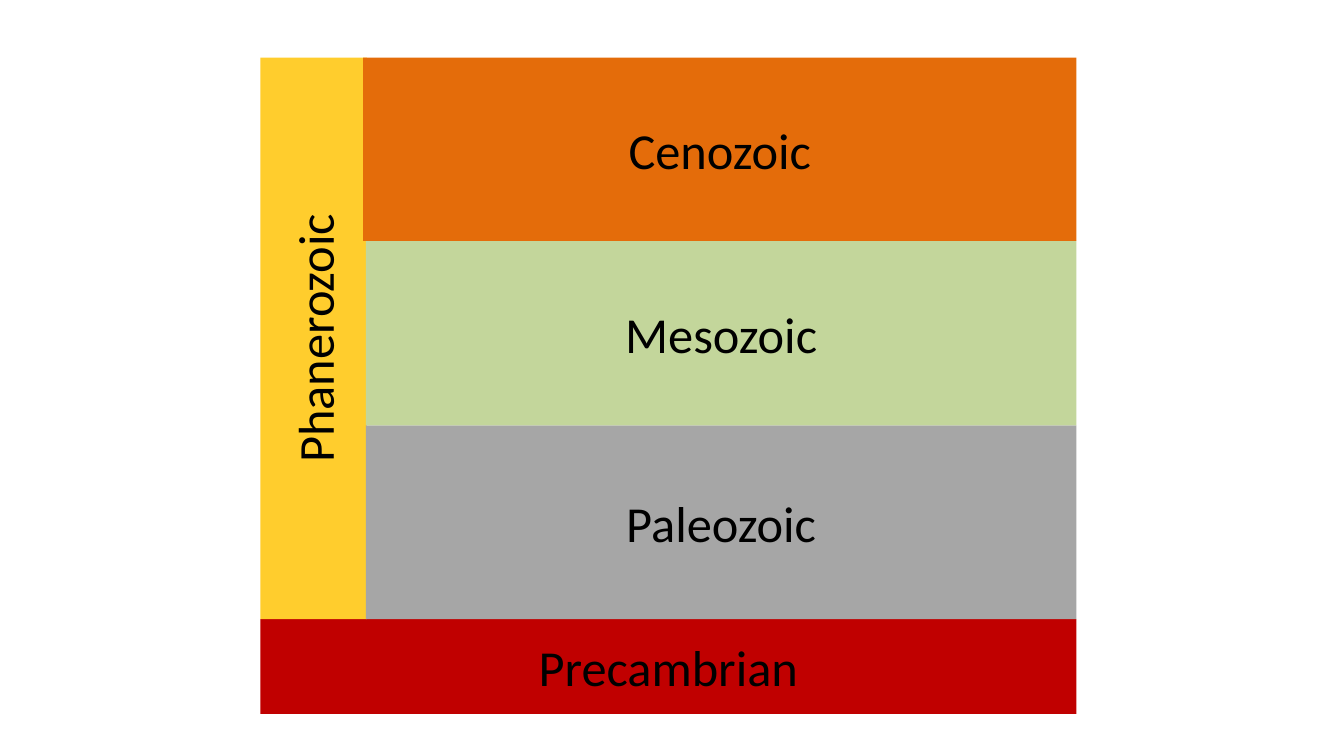
from dataclasses import dataclass

from pptx import Presentation
from pptx.dml.color import RGBColor
from pptx.enum.shapes import MSO_SHAPE
from pptx.enum.text import MSO_ANCHOR, PP_ALIGN
from pptx.shapes.autoshape import Shape
from pptx.slide import Slide
from pptx.util import Cm, Pt

LEFT, RIGHT = 6.56, 27.13
EON_RIGHT, ERA_LEFT, CENOZOIC_LEFT = 9.25, 9.22, 9.15
CENOZOIC_TOP, MESOZOIC_TOP, PALEOZOIC_TOP = 1.45, 6.07, 10.72
PRECAMBRIAN_TOP, BOTTOM = 15.6, 17.99


@dataclass
class Band:
    """A time span by its visible edges in centimetres."""
    text: str
    fill: str
    left: float
    top: float
    right: float
    bottom: float
    upward: bool = False


BANDS = [
    Band("Precambrian", "C00000", LEFT, PRECAMBRIAN_TOP, RIGHT, BOTTOM),
    Band("Phanerozoic", "FFCD2D", LEFT, CENOZOIC_TOP, EON_RIGHT, PRECAMBRIAN_TOP, upward=True),
    Band("Paleozoic", "A6A6A6", ERA_LEFT, PALEOZOIC_TOP, RIGHT, PRECAMBRIAN_TOP),
    Band("Mesozoic", "C3D69B", ERA_LEFT, MESOZOIC_TOP, RIGHT, PALEOZOIC_TOP),
    Band("Cenozoic", "E46C0A", CENOZOIC_LEFT, CENOZOIC_TOP, RIGHT, MESOZOIC_TOP),
]


def rgb(color: str) -> RGBColor:
    return RGBColor.from_string(color)


def write_text(sp: Shape, text: str, *, size: float = 36, font: str = "Calibri",
               color: str = "000000", align: PP_ALIGN = PP_ALIGN.CENTER) -> None:
    tf = sp.text_frame
    tf.word_wrap = True
    tf.vertical_anchor = MSO_ANCHOR.MIDDLE
    p = tf.paragraphs[0]
    p.alignment = align
    r = p.add_run()
    r.text = text
    r.font.size = Pt(size)
    r.font.name = font
    r.font.color.rgb = rgb(color)


def draw_band(s: Slide, band: Band) -> None:
    """Draw a band; an upward one is turned about its centre so its text reads up."""
    width, height = band.right - band.left, band.bottom - band.top
    if band.upward:
        width, height = height, width
    left = (band.left + band.right - width) / 2
    top = (band.top + band.bottom - height) / 2
    sp = s.shapes.add_shape(MSO_SHAPE.RECTANGLE, Cm(left), Cm(top), Cm(width), Cm(height))
    if band.upward:
        sp.rotation = 270
    sp.shadow.inherit = False
    sp.fill.solid()
    sp.fill.fore_color.rgb = rgb(band.fill)
    sp.line.fill.background()
    write_text(sp, band.text)


def main() -> None:
    prs = Presentation()
    prs.slide_width, prs.slide_height = Cm(33.87), Cm(19.05)
    s = prs.slides.add_slide(prs.slide_layouts[6])
    for band in BANDS:
        draw_band(s, band)
    prs.save("out.pptx")


if __name__ == "__main__":
    main()
